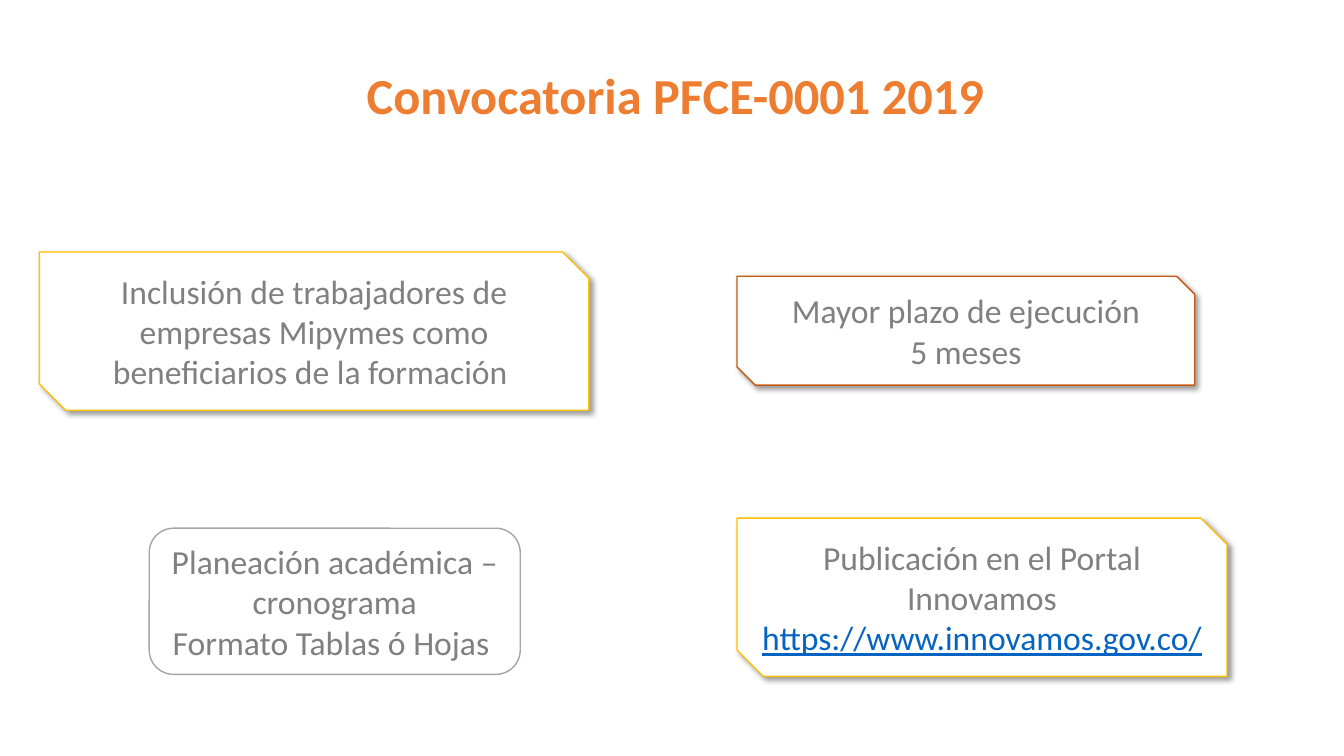
from dataclasses import dataclass

from lxml.etree import SubElement
from pptx import Presentation
from pptx.dml.color import RGBColor
from pptx.enum.shapes import MSO_SHAPE
from pptx.enum.text import MSO_ANCHOR, MSO_AUTO_SIZE, PP_ALIGN
from pptx.oxml.ns import qn
from pptx.shapes.autoshape import Shape
from pptx.slide import Slide
from pptx.text.text import TextFrame
from pptx.util import Emu, Pt

PX_PER_INCH = 100
ORANGE, GREY, LINK = "ED7D31", "808080", "0563C1"
AMBER, RUST, SILVER = "FFC000", "C55A11", "A5A5A5"


@dataclass(frozen=True)
class Card:
    x: int
    y: int
    w: int
    h: int
    line: str
    text: str
    address: str = ""
    snipped: bool = True


CARDS = [
    Card(39, 250, 545, 157, AMBER,
         "Inclusión de trabajadores de empresas Mipymes como "
         "beneficiarios de la formación "),
    Card(731, 514, 486, 157, AMBER, "Publicación en el Portal Innovamos ",
         address="https://www.innovamos.gov.co/"),
    Card(148, 524, 368, 145, SILVER,
         "Planeación académica – cronograma\nFormato Tablas ó Hojas ",
         snipped=False),
    Card(731, 274, 454, 108, RUST, "Mayor plazo de ejecución\n5 meses"),
]


def px(n: int) -> Emu:
    return Emu(n * 914400 // PX_PER_INCH)


def rgb(value: str) -> RGBColor:
    return RGBColor.from_string(value)


def format_text(tf: TextFrame, size: int, color: str, bold: bool = False) -> None:
    tf.word_wrap = True
    tf.auto_size = MSO_AUTO_SIZE.SHAPE_TO_FIT_TEXT
    tf.vertical_anchor = MSO_ANCHOR.MIDDLE
    for p in tf.paragraphs:
        p.alignment = PP_ALIGN.CENTER
        p.line_spacing = 1.0
        for r in p.runs:
            r.font.name = "Calibri"
            r.font.size = Pt(size)
            r.font.bold = bold
            r.font.color.rgb = rgb(color)


def add_shadow(sp: Shape) -> None:
    effects = sp._element.spPr.find(qn("a:effectLst"))
    shadow = SubElement(effects, qn("a:outerShdw"), blurRad=str(Pt(4)),
                        dist=str(Pt(3)), dir="2700000", algn="tl",
                        rotWithShape="0")
    color = SubElement(shadow, qn("a:srgbClr"), val="000000")
    SubElement(color, qn("a:alpha"), val="40000")


def add_title(slide: Slide) -> None:
    title = slide.shapes.title
    title.left, title.top, title.width, title.height = map(px, (206, 58, 928, 71))
    title.text_frame.text = "Convocatoria PFCE-0001 2019"
    format_text(title.text_frame, 36, ORANGE, bold=True)


def add_card(slide: Slide, card: Card) -> None:
    kind = (MSO_SHAPE.SNIP_2_DIAG_RECTANGLE if card.snipped
            else MSO_SHAPE.ROUNDED_RECTANGLE)
    sp = slide.shapes.add_shape(kind, *map(px, (card.x, card.y, card.w, card.h)))
    sp.fill.solid()
    sp.fill.fore_color.rgb = rgb("FFFFFF")
    sp.line.color.rgb = rgb(card.line)
    sp.line.width = Pt(1)
    sp.shadow.inherit = False
    if card.snipped:
        add_shadow(sp)
    tf = sp.text_frame
    tf.text = card.text
    if card.address:
        r = tf.paragraphs[-1].add_run()
        r.text = card.address
    format_text(tf, 24, GREY)
    if card.address:
        r.font.color.rgb = rgb(LINK)
        r.font.underline = True


def main() -> None:
    prs = Presentation()
    prs.slide_width, prs.slide_height = px(1333), px(750)
    slide = prs.slides.add_slide(prs.slide_layouts.get_by_name("Title Only"))
    add_title(slide)
    for card in CARDS:
        add_card(slide, card)
    prs.save("out.pptx")


if __name__ == "__main__":
    main()
